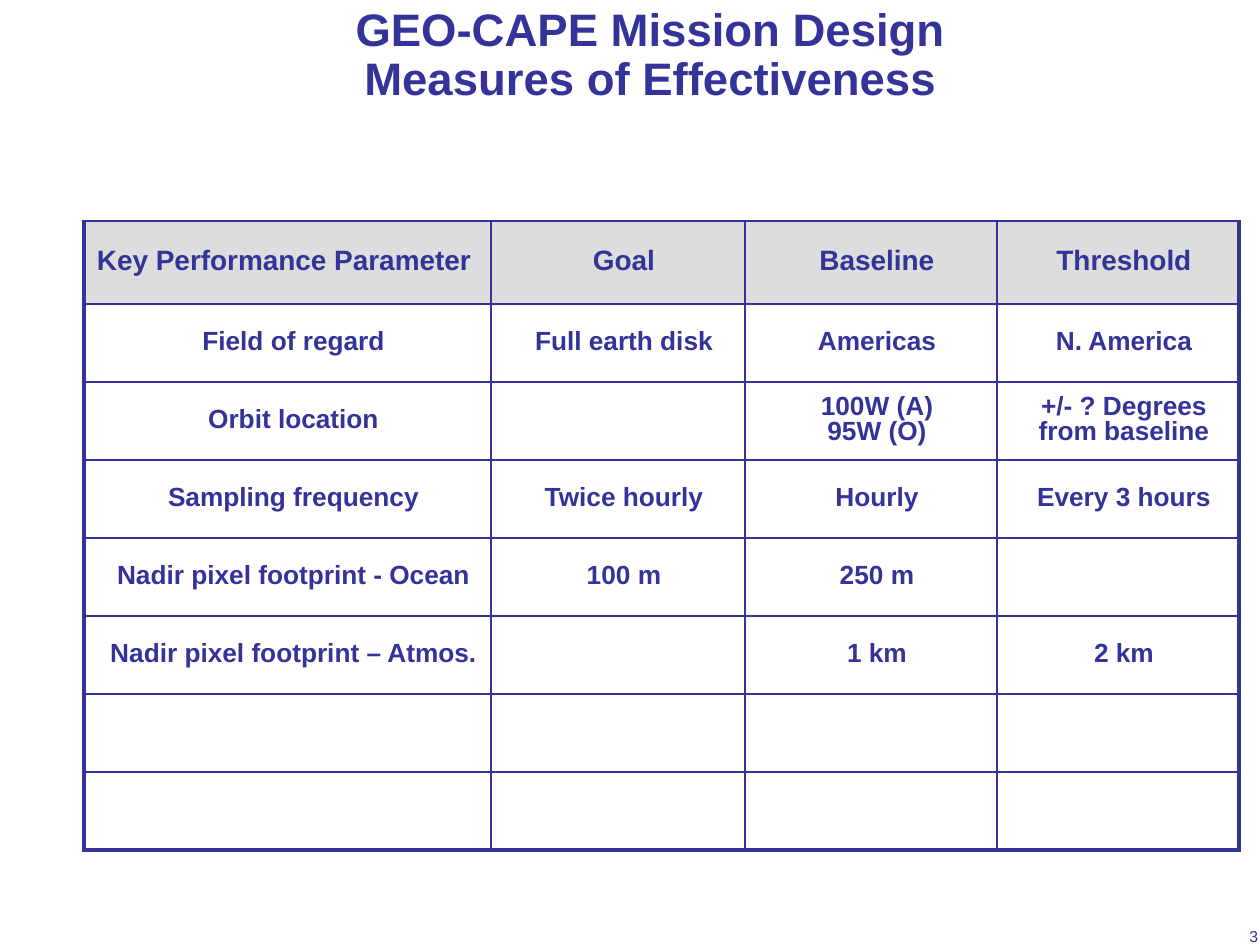
"""Build the GEO-CAPE measures of effectiveness slide."""
import lxml.etree
import pptx
import pptx.dml.color
import pptx.enum.text
import pptx.oxml.ns
import pptx.util

PX = 914400 / 126
COLORS = {"navy": "333399", "header": "DDDDDD"}
ALIGN = pptx.enum.text.PP_ALIGN
MIDDLE = pptx.enum.text.MSO_ANCHOR.MIDDLE


def px(*lengths):
    return [pptx.util.Emu(round(length * PX)) for length in lengths]


def write(text_frame, text, size, bold, alignment, line_spacing):
    text_frame.text = text
    text_frame.word_wrap = True
    for paragraph in text_frame.paragraphs:
        paragraph.alignment = alignment
        paragraph.line_spacing = line_spacing
        for run in paragraph.runs:
            run.font.name = "Arial"
            run.font.size = pptx.util.Pt(size)
            run.font.bold = bold
            run.font.color.rgb = pptx.dml.color.RGBColor.from_string(COLORS["navy"])


presentation = pptx.Presentation()
presentation.slide_width, presentation.slide_height = px(1260, 945)
slide = presentation.slides.add_slide(presentation.slide_layouts[6])

text_boxes = [
    ((156, 6, 989, 100), "GEO-CAPE Mission Design\vMeasures of Effectiveness",
     26, True, ALIGN.CENTER, 0.9, MIDDLE),
    ((1191, 927, 67, 18), "3", 9, False, ALIGN.RIGHT, 1.0, pptx.enum.text.MSO_ANCHOR.TOP),
]
for place, text, size, bold, alignment, line_spacing, anchor in text_boxes:
    text_frame = slide.shapes.add_textbox(*px(*place)).text_frame
    text_frame.margin_left = text_frame.margin_right = 0
    text_frame.margin_top = text_frame.margin_bottom = 0
    text_frame.vertical_anchor = anchor
    write(text_frame, text, size, bold, alignment, line_spacing)

rows = [
    ["Key Performance Parameter", "Goal", "Baseline", "Threshold"],
    ["Field of regard", "Full earth disk", "Americas", "N. America"],
    ["Orbit location", "", "100W (A)\n95W (O)", "+/- ? Degrees from baseline"],
    ["Sampling frequency", "Twice hourly", "Hourly", "Every 3 hours"],
    ["Nadir pixel footprint - Ocean", "100 m", "250 m", ""],
    ["Nadir pixel footprint – Atmos.", "", "1 km", "2 km"],
    ["", "", "", ""],
    ["", "", "", ""],
]
column_widths = [407, 254, 252, 242]
row_heights = [83] + [78] * 7
last_row, last_column = len(rows) - 1, len(column_widths) - 1

table = slide.shapes.add_table(
    len(rows), len(column_widths), *px(84, 221, sum(column_widths), sum(row_heights))
).table
table.horz_banding = False
for column, width in zip(table.columns, px(*column_widths)):
    column.width = width
for row, height in zip(table.rows, px(*row_heights)):
    row.height = height

for row_index, texts in enumerate(rows):
    is_header = row_index == 0
    for column_index, text in enumerate(texts):
        cell = table.cell(row_index, column_index)
        cell.vertical_anchor = MIDDLE
        cell.margin_left, cell.margin_right, cell.margin_top, cell.margin_bottom = px(13, 1, 3, 3)
        is_corner = is_header and column_index == 0
        write(cell.text_frame, text, 16 if is_header else 15, True,
              ALIGN.LEFT if is_corner else ALIGN.CENTER, 0.85)

        border_widths = {
            "a:lnL": 3 if column_index == 0 else 1,
            "a:lnR": 3 if column_index == last_column else 1,
            "a:lnT": 1,
            "a:lnB": 3 if row_index == last_row else 1,
        }
        properties = cell._tc.get_or_add_tcPr()
        for tag, width in border_widths.items():
            line = lxml.etree.SubElement(
                properties, pptx.oxml.ns.qn(tag), w=str(pptx.util.Pt(width)))
            line_fill = lxml.etree.SubElement(line, pptx.oxml.ns.qn("a:solidFill"))
            lxml.etree.SubElement(
                line_fill, pptx.oxml.ns.qn("a:srgbClr"), val=COLORS["navy"])

        if is_header:
            cell.fill.solid()
            cell.fill.fore_color.rgb = pptx.dml.color.RGBColor.from_string(COLORS["header"])
        else:
            cell.fill.background()

presentation.save("out.pptx")
